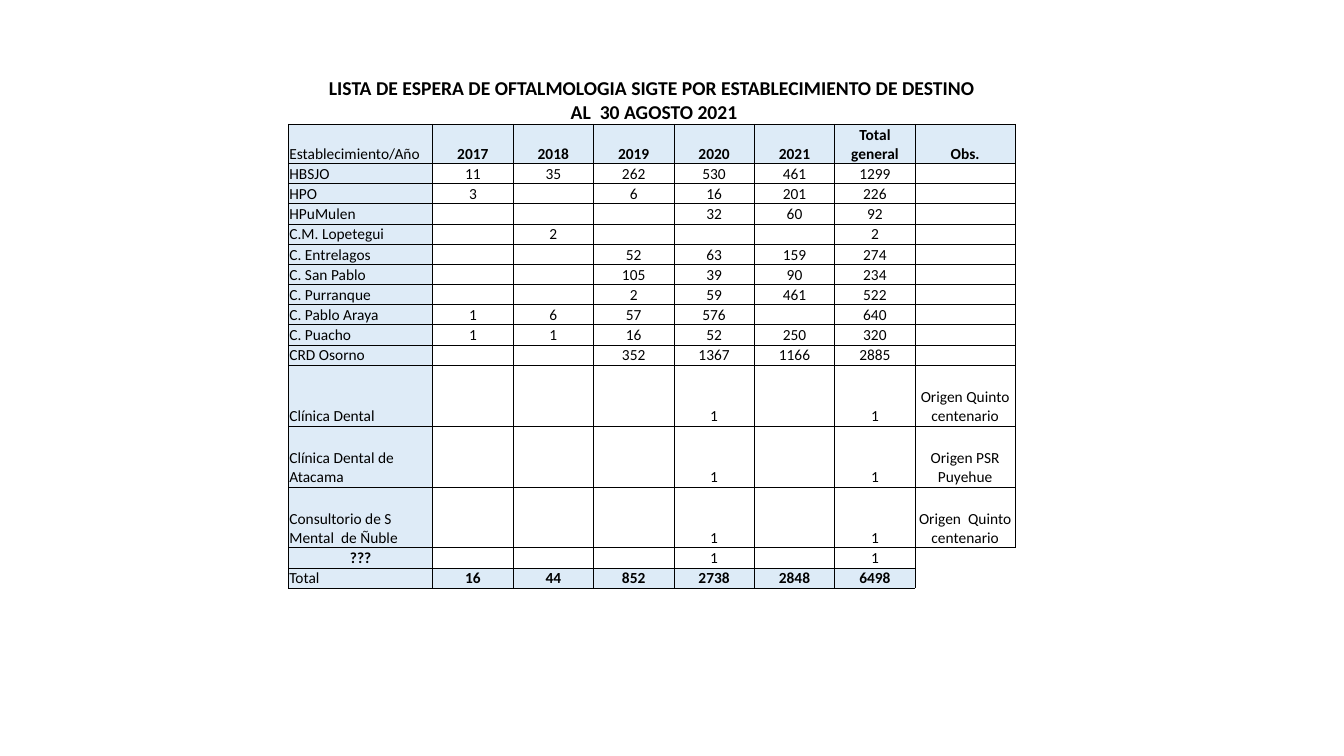
import pptx
import pptx.dml.color
import pptx.enum.text
import pptx.util
from lxml import etree
from pptx.oxml.ns import qn

Pt = pptx.util.Pt
CENTER = pptx.enum.text.PP_ALIGN.CENTER
LEFT = pptx.enum.text.PP_ALIGN.LEFT

HEADING = ["LISTA DE ESPERA DE OFTALMOLOGIA SIGTE POR ESTABLECIMIENTO DE DESTINO",
           " AL  30 AGOSTO 2021"]
COLUMN_NAMES = ["Establecimiento/Año", "2017", "2018", "2019", "2020", "2021",
                "Total general", "Obs."]
WAITING = [
    ["HBSJO", "11", "35", "262", "530", "461", "1299", ""],
    ["HPO", "3", "", "6", "16", "201", "226", ""],
    ["HPuMulen", "", "", "", "32", "60", "92", ""],
    ["C.M. Lopetegui", "", "2", "", "", "", "2", ""],
    ["C. Entrelagos", "", "", "52", "63", "159", "274", ""],
    ["C. San Pablo", "", "", "105", "39", "90", "234", ""],
    ["C. Purranque", "", "", "2", "59", "461", "522", ""],
    ["C. Pablo Araya", "1", "6", "57", "576", "", "640", ""],
    ["C. Puacho", "1", "1", "16", "52", "250", "320", ""],
    ["CRD Osorno", "", "", "352", "1367", "1166", "2885", ""],
    ["Clínica Dental", "", "", "", "1", "", "1", "Origen Quinto centenario"],
    ["Clínica Dental de Atacama", "", "", "", "1", "", "1", "Origen PSR Puyehue"],
    ["Consultorio de S Mental  de Ñuble", "", "", "", "1", "", "1",
     "Origen  Quinto centenario"],
    ["???", "", "", "", "1", "", "1", ""],
]
TOTALS = ["Total", "16", "44", "852", "2738", "2848", "6498", ""]

ROWS = [[""] * 8, COLUMN_NAMES, *WAITING, TOTALS]
COLUMN_WIDTHS = [102.9] + [57.45] * 6 + [71.5]
ROW_HEIGHTS = [34.8, 28] + [14.4] * 10 + [43.5] * 3 + [14.4] * 2
HEADER_ROW, UNKNOWN_ROW, TOTAL_ROW = 1, 15, 16
OBS_COLUMN = 7
NAME_FILL, BAND_FILL, BLACK = "DEEBF7", "DDEBF7", "000000"


def color(hex_text):
    return pptx.dml.color.RGBColor.from_string(hex_text)


def set_borders(cell, drawn_sides):
    """Draw a thin black line on the given sides (of L, R, T, B), none on the rest."""
    properties = cell._tc.get_or_add_tcPr()
    for side in "LRTB":
        line = etree.SubElement(properties, qn(f"a:ln{side}"), w=str(Pt(0.5)))
        if side in drawn_sides:
            fill = etree.SubElement(line, qn("a:solidFill"))
            etree.SubElement(fill, qn("a:srgbClr"), val=BLACK)
        else:
            etree.SubElement(line, qn("a:noFill"))


def write(paragraph, text, size, bold, alignment):
    paragraph.alignment = alignment
    if not text:
        etree.SubElement(paragraph._p, qn("a:endParaRPr"), sz=str(size * 100))
        return
    run = paragraph.add_run()
    run.text = text
    run.font.name = "Calibri"
    run.font.size = Pt(size)
    run.font.bold = bold
    run.font.color.rgb = color(BLACK)


def sides_of(row, column):
    if row == 0:
        return "B"
    if column == OBS_COLUMN and row >= UNKNOWN_ROW:
        return "LT" if row == UNKNOWN_ROW else "L"
    return "LRTB"


def fill_of(row, column):
    if column == 0 and row > 0:
        return NAME_FILL
    if row == HEADER_ROW or (row == TOTAL_ROW and column < OBS_COLUMN):
        return BAND_FILL
    return None


presentation = pptx.Presentation()
presentation.slide_width, presentation.slide_height = Pt(960), Pt(540)
slide = presentation.slides.add_slide(presentation.slide_layouts[6])

waiting_list = slide.shapes.add_table(
    len(ROWS), len(COLUMN_WIDTHS), Pt(206.2), Pt(54),
    Pt(sum(COLUMN_WIDTHS)), Pt(sum(ROW_HEIGHTS))).table
waiting_list.first_row = False
waiting_list.horz_banding = False
for column, width in zip(waiting_list.columns, COLUMN_WIDTHS):
    column.width = Pt(width)
for row, height in zip(waiting_list.rows, ROW_HEIGHTS):
    row.height = Pt(height)

for r, values in enumerate(ROWS):
    for c, value in enumerate(values):
        cell = waiting_list.cell(r, c)
        cell.margin_left = cell.margin_right = cell.margin_top = Pt(0.5)
        cell.margin_bottom = Pt(0)
        cell.vertical_anchor = pptx.enum.text.MSO_ANCHOR.BOTTOM
        set_borders(cell, sides_of(r, c))
        shade = fill_of(r, c)
        if shade:
            cell.fill.solid()
            cell.fill.fore_color.rgb = color(shade)
        else:
            cell.fill.background()
        if (r, c) == (0, 0):
            continue
        is_name = c == 0 and r != UNKNOWN_ROW
        bold = not is_name and (r in (HEADER_ROW, TOTAL_ROW) or c == 0)
        write(cell.text_frame.paragraphs[0], value, 11, bold, LEFT if is_name else CENTER)

heading = waiting_list.cell(0, 0)
heading.merge(waiting_list.cell(0, OBS_COLUMN))
for i, line in enumerate(HEADING):
    frame = heading.text_frame
    write(frame.add_paragraph() if i else frame.paragraphs[0], line, 14, True, CENTER)

presentation.save("out.pptx")
